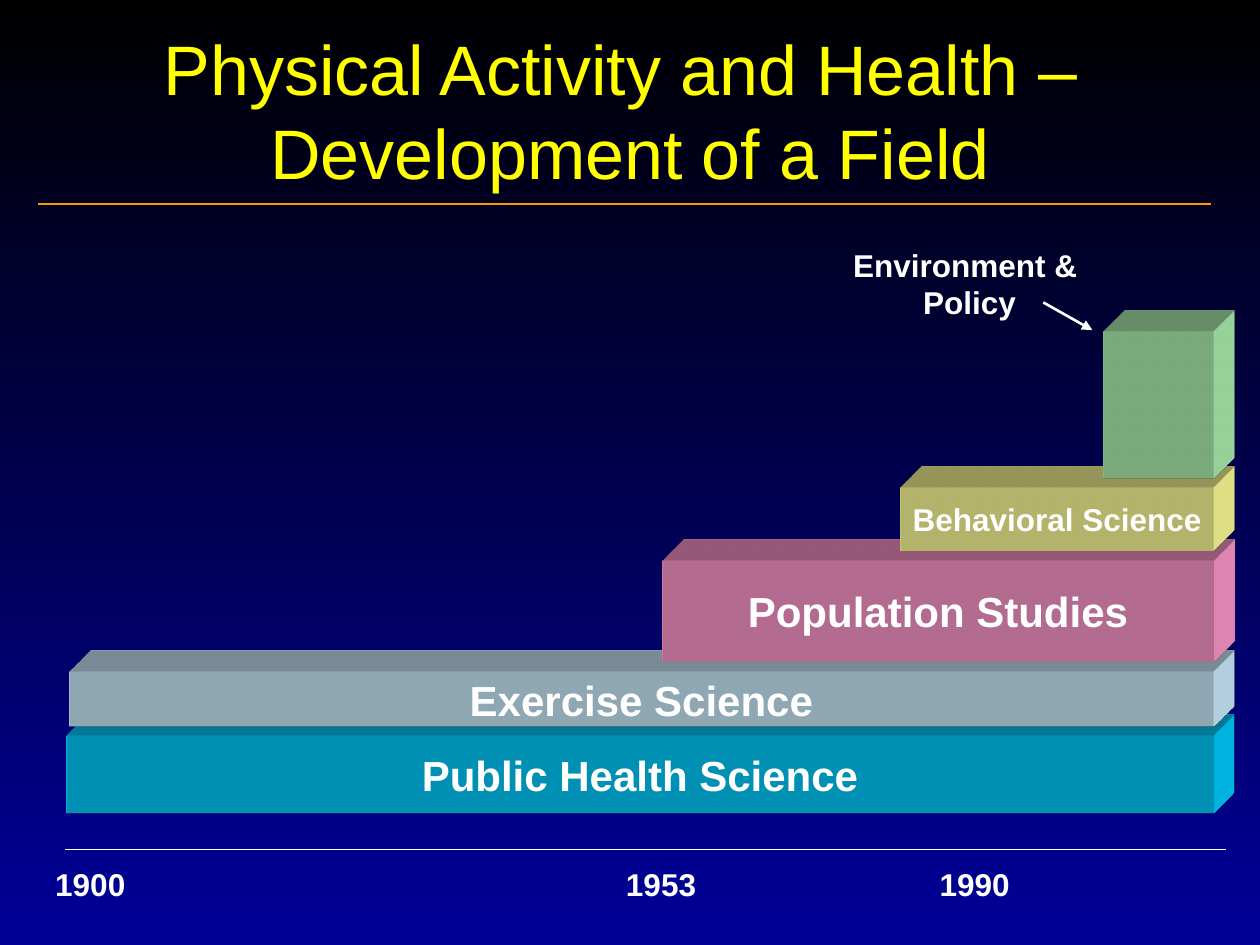
from dataclasses import dataclass

import lxml.etree
import pptx
import pptx.dml.color
import pptx.enum.shapes
import pptx.enum.text
import pptx.oxml
import pptx.oxml.ns
import pptx.util

# Grid: 100 columns by 75 rows, each cell a tenth of an inch
CELL = pptx.util.Inches(0.1)
FONT = "Arial"
WHITE = "FFFFFF"
BLOCK_RIGHT = 96.3
CENTER = pptx.enum.text.PP_ALIGN.CENTER
LEFT = pptx.enum.text.PP_ALIGN.LEFT
MIDDLE = pptx.enum.text.MSO_ANCHOR.MIDDLE
NO_FIT = pptx.enum.text.MSO_AUTO_SIZE.NONE
GROW = pptx.enum.text.MSO_AUTO_SIZE.SHAPE_TO_FIT_TEXT


@dataclass
class Block:
    label: str
    left: float
    top: float
    height: float
    color: str
    size: int = 24


@dataclass
class Rule:
    start: tuple[float, float]
    end: tuple[float, float]
    color: str
    width: float = 0.75
    arrow: bool = False


@dataclass
class Caption:
    lines: list[str]
    left: float
    top: float
    width: float
    height: float
    align: pptx.enum.text.PP_ALIGN = LEFT


FIELDS = [
    Block("Public Health Science", 5.3, 58.4, 6.2, "00CCFF"),
    Block("Exercise Science", 5.5, 53.3, 4.4, "CCECFF"),
    Block("Population Studies", 52.6, 44.5, 8, "FF99CC"),
    Block("Behavioral Science", 71.5, 38.7, 5, "FFFF99", 18),
    Block("", 87.6, 26.3, 11.7, "AEF0B1"),
]
RULES = [
    Rule((3, 16.2), (96.1, 16.2), "FF9900"),
    Rule((5.2, 67.4), (97.3, 67.4), WHITE),
]
POLICY_ARROW = Rule((82.8, 24), (86.7, 26.2), WHITE, 1.5, True)
POLICY = Caption(["Environment & ", "Policy"], 66.7, 19, 20.5, 7, CENTER)
YEARS = [Caption([year], left, 68.2, 7.6, 4)
         for year, left in (("1900", 3.4), ("1953", 48.7), ("1990", 73.6))]


def cells(*counts: float) -> list[int]:
    return [round(count * CELL) for count in counts]


def rgb(color: str) -> pptx.dml.color.RGBColor:
    return pptx.dml.color.RGBColor.from_string(color)


def add_run(paragraph, text: str, size: int, color: str = WHITE, bold: bool = True) -> None:
    run = paragraph.add_run()
    run.text = text
    run.font.name = FONT
    run.font.size = pptx.util.Pt(size)
    run.font.bold = bold
    run.font.color.rgb = rgb(color)


def extrude(shape, color: str) -> None:
    """Give a shape an oblique depth towards the top right."""
    namespace = pptx.oxml.ns.nsdecls("a")
    scene = (f'<a:scene3d {namespace}><a:camera prst="legacyObliqueTopRight"/>'
             '<a:lightRig rig="legacyFlat3" dir="b"/></a:scene3d>')
    depth = (f'<a:sp3d {namespace} extrusionH="430200" prstMaterial="legacyMatte">'
             '<a:bevelT w="13500" h="13500" prst="angle"/>'
             '<a:bevelB w="13500" h="13500" prst="angle"/>'
             f'<a:extrusionClr><a:srgbClr val="{color}"/></a:extrusionClr></a:sp3d>')
    for part in (scene, depth):
        shape._element.spPr.append(pptx.oxml.parse_xml(part))


def add_block(slide, block: Block) -> None:
    shape = slide.shapes.add_shape(
        pptx.enum.shapes.MSO_SHAPE.RECTANGLE,
        *cells(block.left, block.top, BLOCK_RIGHT - block.left, block.height))
    shape.fill.solid()
    shape.fill.fore_color.rgb = rgb(block.color)
    shape.line.fill.background()
    shape.shadow.inherit = False
    extrude(shape, block.color)
    if block.label:
        frame = shape.text_frame
        frame.word_wrap = False
        frame.vertical_anchor = MIDDLE
        frame.paragraphs[0].alignment = CENTER
        add_run(frame.paragraphs[0], block.label, block.size)


def add_rule(slide, rule: Rule) -> None:
    line = slide.shapes.add_connector(
        pptx.enum.shapes.MSO_CONNECTOR.STRAIGHT, *cells(*rule.start, *rule.end))
    line.line.color.rgb = rgb(rule.color)
    line.line.width = pptx.util.Pt(rule.width)
    if rule.arrow:
        lxml.etree.SubElement(line.line._get_or_add_ln(),
                              pptx.oxml.ns.qn("a:tailEnd"), type="triangle")
    lxml.etree.SubElement(line._element.spPr, pptx.oxml.ns.qn("a:effectLst"))


def add_caption(slide, caption: Caption) -> None:
    frame = slide.shapes.add_textbox(
        *cells(caption.left, caption.top, caption.width, caption.height)).text_frame
    frame.word_wrap = False
    frame.auto_size = GROW
    for index, text in enumerate(caption.lines):
        paragraph = frame.add_paragraph() if index else frame.paragraphs[0]
        paragraph.alignment = caption.align
        add_run(paragraph, text, 18)


def set_title(slide, first: str, second: str) -> None:
    title = slide.shapes.title
    title.left, title.top, title.width, title.height = cells(0, 3.8, 100, 9.8)
    frame = title.text_frame
    frame.auto_size = NO_FIT
    frame.vertical_anchor = MIDDLE
    heading = frame.paragraphs[0]
    heading.alignment = CENTER
    add_run(heading, first, 40, "FFFF00", False)
    heading.add_line_break()
    add_run(heading, second, 40, "FFFF00", False)


def set_background(slide, top: str, bottom: str) -> None:
    fill = slide.background.fill
    fill.gradient()
    fill.gradient_angle = 270
    for stop, color in zip(fill.gradient_stops, (top, bottom)):
        stop.color.rgb = rgb(color)


def main() -> None:
    deck = pptx.Presentation()
    deck.slide_width, deck.slide_height = cells(100, 75)
    slide = deck.slides.add_slide(deck.slide_layouts[0])
    subtitle = slide.placeholders[1]._element
    subtitle.getparent().remove(subtitle)

    # Backdrop and title
    set_background(slide, "000000", "000099")
    set_title(slide, "Physical Activity and Health – ", "Development of a Field")

    # Title rule and time axis
    for rule in RULES:
        add_rule(slide, rule)

    # Stacked fields, oldest at the bottom
    for block in FIELDS:
        add_block(slide, block)

    # Callout for the newest field, then the years
    add_rule(slide, POLICY_ARROW)
    for caption in [POLICY, *YEARS]:
        add_caption(slide, caption)

    deck.save("out.pptx")


if __name__ == "__main__":
    main()
